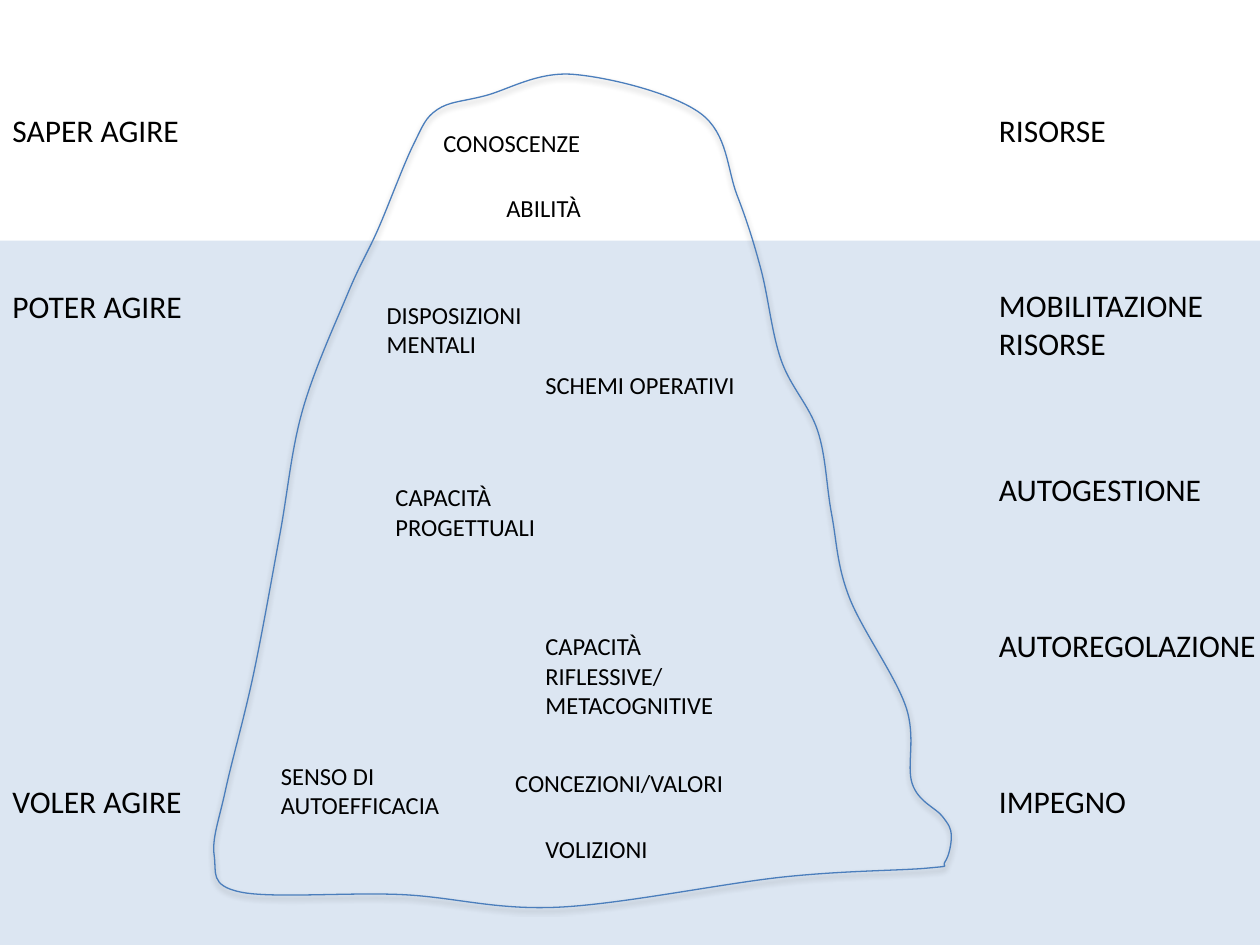
from lxml import etree
from pptx import Presentation
from pptx.dml.color import RGBColor
from pptx.enum.shapes import MSO_SHAPE
from pptx.enum.text import MSO_AUTO_SIZE
from pptx.oxml.ns import qn
from pptx.util import Inches, Pt

RECTANGLE = MSO_SHAPE.RECTANGLE
FIT_SHAPE = MSO_AUTO_SIZE.SHAPE_TO_FIT_TEXT
BLACK = RGBColor(0x00, 0x00, 0x00)
WATER = RGBColor(0xDC, 0xE6, 0xF2)
OUTLINE = RGBColor(0x4B, 0x7E, 0xBC)

# The slide is a grid of 100 columns by 75 rows.
COLUMNS, ROWS = 100, 75
CELL = Inches(0.1)
WATERLINE = 19.1
LEFT_COLUMN, RIGHT_COLUMN = 0, 78.3
LABEL_SIZE, CONCEPT_SIZE = 18, 14
LABEL_WIDTH, CONCEPT_WIDTH = 22.6, 18.9

# (column, row, text)
LABELS = [
    (RIGHT_COLUMN, 8.3, "RISORSE"),
    (RIGHT_COLUMN, 22.2, "MOBILITAZIONE RISORSE"),
    (RIGHT_COLUMN, 36.8, "AUTOGESTIONE"),
    (RIGHT_COLUMN, 49.2, "AUTOREGOLAZIONE"),
    (RIGHT_COLUMN, 61.6, "IMPEGNO"),
    (LEFT_COLUMN, 8.3, "SAPER AGIRE"),
    (LEFT_COLUMN, 22.3, "POTER AGIRE"),
    (LEFT_COLUMN, 61.6, "VOLER AGIRE"),
]
CONCEPTS = [
    (34.2, 9.7, "CONOSCENZE"),
    (39.2, 14.8, "ABILITÀ"),
    (29.7, 23.3, "DISPOSIZIONI MENTALI"),
    (42.3, 28.9, "SCHEMI OPERATIVI"),
    (30.4, 37.8, "CAPACITÀ PROGETTUALI"),
    (42.3, 49.6, "CAPACITÀ RIFLESSIVE/ METACOGNITIVE"),
    (21.3, 59.9, "SENSO DI AUTOEFFICACIA"),
    (39.9, 60.5, "CONCEZIONI/VALORI"),
    (42.3, 65.7, "VOLIZIONI"),
]
ICEBERG = [
    (73.6, 68.9), (62.2, 69.6), (44.3, 72.0), (31.9, 71.0), (19.1, 70.8),
    (17.0, 67.9), (17.9, 62.7), (20.1, 53.6), (22.2, 42.5), (24.0, 32.6),
    (27.6, 23.3), (30.0, 18.2), (32.8, 11.5), (34.7, 8.7), (38.5, 7.6),
    (45.5, 5.9), (55.6, 9.0), (58.5, 15.5), (60.4, 21.4), (62.0, 28.6),
    (64.9, 34.2), (66.0, 40.8), (67.4, 47.4), (71.9, 56.1), (72.4, 62.2),
    (74.8, 64.8), (75.5, 66.3), (75.0, 68.4),
]


def smooth_path(path):
    """Turn a closed path of straight segments into a Catmull-Rom curve."""
    segments = path.findall(qn("a:lnTo"))
    ends = [(int(s[0].get("x")), int(s[0].get("y"))) for s in segments]
    count = len(ends)
    for i, segment in enumerate(segments):
        before, start, end, after = (ends[(i + k) % count] for k in (-2, -1, 0, 1))
        lead = [s + (e - b) / 6 for b, s, e in zip(before, start, end)]
        trail = [e - (a - s) / 6 for s, e, a in zip(start, end, after)]
        curve = etree.Element(qn("a:cubicBezTo"))
        for x, y in (lead, trail, end):
            etree.SubElement(curve, qn("a:pt"), x=str(round(x)), y=str(round(y)))
        path.replace(segment, curve)


class SlideCanvas:
    """Holds the text style and the slide; positions are in grid cells."""

    font = "Calibri"
    text_color = BLACK

    def __init__(self, slide):
        self.shapes = slide.shapes

    def band(self, column, row, width, height, color):
        box = [round(v * CELL) for v in (column, row, width, height)]
        band = self.shapes.add_shape(RECTANGLE, *box)
        band.shadow.inherit = False
        band.fill.solid()
        band.fill.fore_color.rgb = color
        band.line.fill.background()

    def text(self, column, row, width, size, words):
        height = size * 0.22
        box = [round(v * CELL) for v in (column, row, width, height)]
        frame = self.shapes.add_textbox(*box).text_frame
        frame.word_wrap = True
        frame.auto_size = FIT_SHAPE
        run = frame.paragraphs[0].add_run()
        run.text = words
        run.font.name = self.font
        run.font.size = Pt(size)
        run.font.color.rgb = self.text_color

    def smooth_outline(self, points, color):
        vertices = [(round(x * CELL), round(y * CELL)) for x, y in points]
        builder = self.shapes.build_freeform(*vertices[0])
        builder.add_line_segments(vertices[1:] + vertices[:1], close=True)
        outline = builder.convert_to_shape()
        outline.fill.background()
        outline.line.color.rgb = color
        outline.line.width = Pt(0.75)
        properties = outline._element.spPr
        smooth_path(properties.find(".//" + qn("a:path")))
        outline.shadow.inherit = False
        self.soft_shadow(properties.find(qn("a:effectLst")))

    def soft_shadow(self, effects):
        shadow = etree.SubElement(
            effects, qn("a:outerShdw"), blurRad=str(Pt(3.1)),
            dist=str(Pt(1.8)), dir="5400000", rotWithShape="0")
        tint = etree.SubElement(shadow, qn("a:srgbClr"), val=str(BLACK))
        etree.SubElement(tint, qn("a:alpha"), val="35000")


def main():
    deck = Presentation()
    deck.slide_width = COLUMNS * CELL
    deck.slide_height = ROWS * CELL
    canvas = SlideCanvas(deck.slides.add_slide(deck.slide_layouts[6]))

    canvas.band(0, WATERLINE, COLUMNS, ROWS - WATERLINE, WATER)
    for column, row, words in LABELS:
        canvas.text(column, row, LABEL_WIDTH, LABEL_SIZE, words)
    canvas.smooth_outline(ICEBERG, OUTLINE)
    for column, row, words in CONCEPTS:
        canvas.text(column, row, CONCEPT_WIDTH, CONCEPT_SIZE, words)
    deck.save("out.pptx")


if __name__ == "__main__":
    main()
